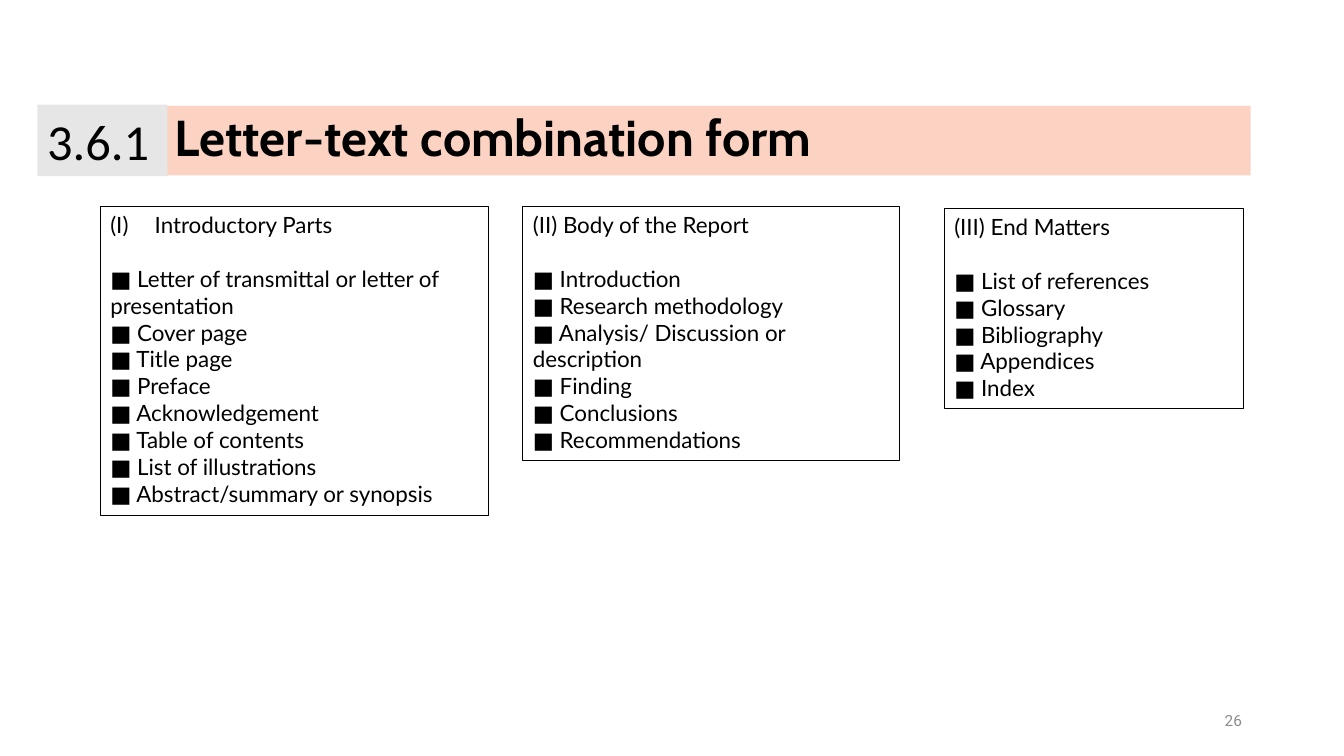
from lxml import etree
from pptx import Presentation, util as u
from pptx.dml.color import RGBColor
from pptx.enum import shapes, text
from pptx.oxml import ns

BLACK = RGBColor(0x00, 0x00, 0x00)
PEACH = RGBColor(0xFC, 0xD3, 0xC2)
LIGHT_GREY = RGBColor(0xE7, 0xE6, 0xE6)
PAGE_GREY = RGBColor(0x8C, 0x8C, 0x8C)
TITLE_ONLY = 5

INTRODUCTORY_PARTS = [
    "Letter of transmittal or letter of presentation", "Cover page",
    "Title page", "Preface", "Acknowledgement", "Table of contents",
    "List of illustrations", "Abstract/summary or synopsis",
]
REPORT_BODY = [
    "Introduction", "Research methodology",
    "Analysis/ Discussion or description", "Finding", "Conclusions",
    "Recommendations",
]
END_MATTERS = [
    "List of references", "Glossary", "Bibliography", "Appendices", "Index",
]


def write(paragraph, words, font="Lato", size=16, color=BLACK, bold=False,
          align=text.PP_ALIGN.LEFT, space_before=0, line_spacing=1.0):
    paragraph.alignment = align
    paragraph.space_before = u.Pt(space_before)
    paragraph.line_spacing = line_spacing
    run = paragraph.add_run()
    run.text = words
    run.font.name = font
    run.font.size = u.Pt(size)
    run.font.bold = bold
    run.font.color.rgb = color


def number_roman(paragraph, indent):
    """Give the paragraph automatic (I), (II) numbering with a hanging indent."""
    properties = paragraph._p.get_or_add_pPr()
    properties.set("marL", str(indent))
    properties.set("indent", str(-indent))
    etree.SubElement(properties, ns.qn("a:buAutoNum"), type="romanUcParenBoth")


class ReportSlide:
    def __init__(self, presentation):
        self.slide = presentation.slides.add_slide(
            presentation.slide_layouts[TITLE_ONLY])

    def prepare(self, shape, anchor):
        frame = shape.text_frame
        frame.word_wrap = True
        frame.auto_size = text.MSO_AUTO_SIZE.NONE
        frame.vertical_anchor = anchor
        return frame.paragraphs[0]

    def title(self, words, left, top, width, height):
        title = self.slide.shapes.title
        title.left, title.top = u.Cm(left), u.Cm(top)
        title.width, title.height = u.Cm(width), u.Cm(height)
        title.fill.solid()
        title.fill.fore_color.rgb = PEACH
        write(self.prepare(title, text.MSO_ANCHOR.MIDDLE), words,
              font="Cabin", size=36, bold=True, line_spacing=0.9)

    def box(self, left, top, width, height, fill=None, line=None):
        box = self.slide.shapes.add_shape(
            shapes.MSO_SHAPE.RECTANGLE,
            u.Cm(left), u.Cm(top), u.Cm(width), u.Cm(height))
        box.shadow.inherit = False
        if fill is None:
            box.fill.background()
        else:
            box.fill.solid()
            box.fill.fore_color.rgb = fill
        if line is None:
            box.line.fill.background()
        else:
            box.line.color.rgb = line
            box.line.width = u.Pt(0.75)
        return box

    def section_number(self, words, *place):
        box = self.box(*place, fill=LIGHT_GREY)
        write(self.prepare(box, text.MSO_ANCHOR.TOP), words,
              font="Calibri", size=36)

    def parts_list(self, heading, parts, *place, numbered=False):
        box = self.box(*place, line=BLACK)
        first = self.prepare(box, text.MSO_ANCHOR.TOP)
        if numbered:
            number_roman(first, u.Cm(1.12))
        write(first, heading)
        for index, part in enumerate(parts):
            write(box.text_frame.add_paragraph(), f"■ {part}",
                  space_before=0 if index else 19.2)

    def page_number(self, words, left, top, width, height):
        label = self.slide.shapes.add_textbox(
            u.Cm(left), u.Cm(top), u.Cm(width), u.Cm(height))
        write(self.prepare(label, text.MSO_ANCHOR.MIDDLE), words,
              font="Roboto", size=11, color=PAGE_GREY,
              align=text.PP_ALIGN.RIGHT)


def main():
    presentation = Presentation()
    presentation.slide_width = u.Cm(33.87)
    presentation.slide_height = u.Cm(19.05)

    report = ReportSlide(presentation)
    report.title("Letter-text combination form", 4.14, 2.67, 27.38, 1.75)
    report.page_number("26", 23.93, 17.65, 7.62, 1.02)
    report.section_number("3.6.1", 0.94, 2.64, 3.28, 1.8)
    report.parts_list("Introductory Parts", INTRODUCTORY_PARTS,
                      2.53, 5.2, 9.78, 7.8, numbered=True)
    report.parts_list("(II) Body of the Report", REPORT_BODY,
                      13.18, 5.2, 9.48, 6.4)
    report.parts_list("(III) End Matters", END_MATTERS,
                      23.8, 5.25, 7.54, 5.05)
    presentation.save("out.pptx")


if __name__ == "__main__":
    main()
